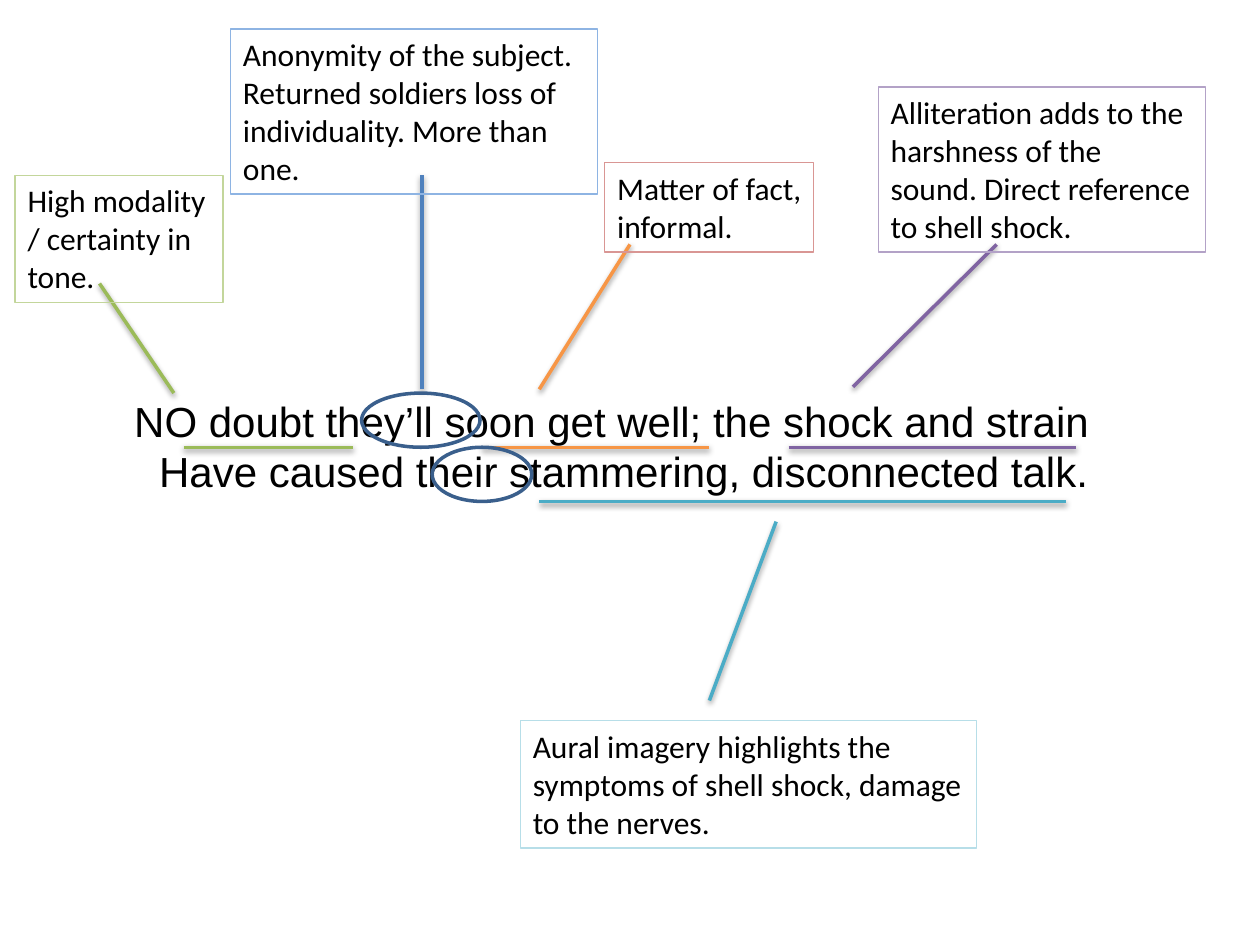
import pptx
import pptx.util
import pptx.dml.color
import pptx.enum.shapes
import pptx.enum.text

Inches = pptx.util.Inches
Pt = pptx.util.Pt
Kind = pptx.enum.shapes.MSO_SHAPE


def color(code):
    return pptx.dml.color.RGBColor.from_string(code)


def outline(kind, box, code, width):
    shape = slide.shapes.add_shape(kind, *[Inches(n) for n in box])
    shape.shadow.inherit = False
    shape.fill.background()
    shape.line.color.rgb = color(code)
    shape.line.width = Pt(width)
    return shape


deck = pptx.Presentation()
deck.slide_width, deck.slide_height = Inches(10), Inches(7.5)
slide = deck.slides.add_slide(deck.slide_layouts[6])

verse = slide.shapes.add_textbox(Inches(0.94), Inches(3.09), Inches(8.11), Inches(0.91))
frame = verse.text_frame
frame.word_wrap = True
frame.margin_right = Inches(0.38)
frame.text = (
    "NO doubt they’ll soon get well; the shock and strain\n"
    "Have caused their stammering, disconnected talk."
)
for para in frame.paragraphs:
    para.alignment = pptx.enum.text.PP_ALIGN.CENTER
    para.font.name = "Arial"
    para.font.size = Pt(24)
    para.font.color.rgb = color("000000")
props = frame.paragraphs[1]._p.get_or_add_pPr()
props.set("marL", str(Inches(0.19)))
props.set("indent", "0")

lines = [
    ("9BBB59", 1.46, 3.55, 2.8, 3.55),
    ("9BBB59", 1.38, 3.12, 0.79, 2.25),
    ("4F81BD", 3.35, 3.09, 3.35, 1.39),
    ("F79646", 3.82, 3.55, 5.63, 3.55),
    ("F79646", 4.28, 3.09, 5, 1.94),
    ("8064A2", 6.26, 3.55, 8.54, 3.55),
    ("8064A2", 6.77, 3.07, 7.91, 1.94),
    ("4BACC6", 4.28, 3.98, 8.46, 3.98),
    ("4BACC6", 6.16, 4.14, 5.63, 5.56),
]
for code, *ends in lines:
    line = slide.shapes.add_connector(
        pptx.enum.shapes.MSO_CONNECTOR.STRAIGHT, *[Inches(n) for n in ends]
    )
    line.line.color.rgb = color(code)
    line.line.width = Pt(2)

for box in [(2.87, 3.12, 0.94, 0.43), (3.43, 3.55, 0.79, 0.43)]:
    outline(Kind.OVAL, box, "3A5F8C", 2)

notes = [
    ("C3D69B", (0.12, 1.39, 1.65, 1.01), "High modality / certainty in tone."),
    ("8EB4E3", (1.83, 0.23, 2.91, 1.31),
     "Anonymity of the subject. Returned soldiers loss of individuality. More than one."),
    ("D99694", (4.8, 1.29, 1.66, 0.71), "Matter of fact, informal."),
    ("B3A2C7", (6.97, 0.69, 2.6, 1.31),
     "Alliteration adds to the harshness of the sound. Direct reference to shell shock."),
    ("B7DEE8", (4.13, 5.72, 3.62, 1.01),
     "Aural imagery highlights the symptoms of shell shock, damage to the nerves."),
]
for code, box, text in notes:
    frame = outline(Kind.RECTANGLE, box, code, 0.75).text_frame
    frame.word_wrap = True
    frame.vertical_anchor = pptx.enum.text.MSO_ANCHOR.TOP
    frame.text = text
    para = frame.paragraphs[0]
    para.alignment = pptx.enum.text.PP_ALIGN.LEFT
    para.font.name = "Calibri"
    para.font.size = Pt(18)
    para.font.color.rgb = color("000000")

deck.save("out.pptx")
